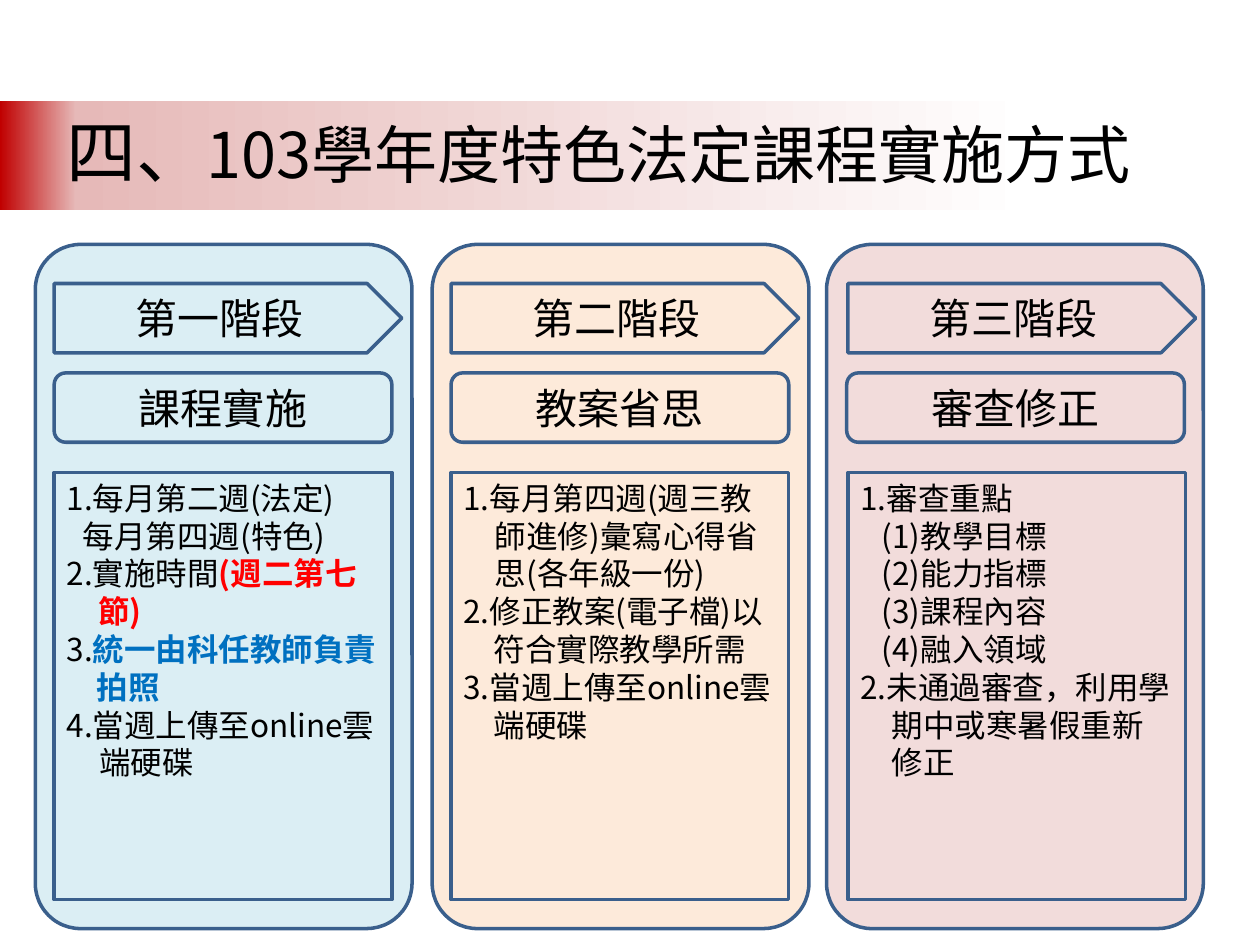
from copy import deepcopy

from pptx import Presentation
from pptx.dml.color import RGBColor
from pptx.enum.shapes import MSO_SHAPE as SHAPE
from pptx.enum.text import MSO_ANCHOR as ANCHOR, MSO_AUTO_SIZE as AUTO, PP_ALIGN as ALIGN
from pptx.oxml.ns import qn
from pptx.util import Inches, Pt

SANS = "Noto Sans CJK SC"
BLACK, RED, BLUE, OUTLINE = "000000", "FF0000", "0070C0", "3A5F8C"

STAGES = [
    (0.28, 0.43, 0.43, "DBEEF4", "第一階段", "課程實施", [
        (0, 0, [("1.每月第二週(法定)", BLACK)]),
        (0.13, 0, [("每月第四週(特色)", BLACK)]),
        (0.25, -0.25, [("2.實施時間", BLACK), ("(週二第七節)", RED)]),
        (0.24, -0.24, [("3.", BLACK), ("統一由科任教師負責拍照", BLUE)]),
        (0.26, -0.26, [("4.當週上傳至online雲端硬碟", BLACK)]),
    ]),
    (3.43, 3.58, 3.58, "FDEADA", "第二階段", "教案省思", [
        (0.25, -0.25, [("1.每月第四週(週三教師進修)彙寫心得省思(各年級一份)", BLACK)]),
        (0.24, -0.24, [("2.修正教案(電子檔)以符合實際教學所需", BLACK)]),
        (0.24, -0.24, [("3.當週上傳至online雲端硬碟", BLACK)]),
    ]),
    (6.56, 6.73, 6.72, "F2DCDB", "第三階段", "審查修正", [
        (0, 0, [("1.審查重點", BLACK)]),
        (0.17, 0, [("(1)教學目標", BLACK)]),
        (0.17, 0, [("(2)能力指標", BLACK)]),
        (0.17, 0, [("(3)課程內容", BLACK)]),
        (0.17, 0, [("(4)融入領域", BLACK)]),
        (0.25, -0.25, [("2.未通過審查，利用學期中或寒暑假重新修正", BLACK)]),
    ]),
]


def rgb(color):
    return RGBColor.from_string(color)


def add_run(p, text, size, font=SANS, color=BLACK, bold=False):
    r = p.add_run()
    r.text = text
    r.font.size = Pt(size)
    r.font.name = font
    r.font.bold = bold
    r.font.color.rgb = rgb(color)
    if font == SANS:
        latin = r.font._element.find(qn("a:latin"))
        ea = latin.makeelement(qn("a:ea"), {"typeface": font})
        latin.addnext(ea)


def add_box(shapes, kind, x, y, w, h, fill=None):
    sp = shapes.add_shape(kind, Inches(x), Inches(y), Inches(w), Inches(h))
    sp.shadow.inherit = False
    if fill:
        sp.fill.solid()
        sp.fill.fore_color.rgb = rgb(fill)
    else:
        sp.fill.background()
    sp.line.color.rgb = rgb(OUTLINE)
    sp.line.width = Pt(2)
    return sp


def add_label(shapes, kind, x, y, w, text, font):
    sp = add_box(shapes, kind, x, y, w, 0.55)
    tf = sp.text_frame
    tf.vertical_anchor = ANCHOR.MIDDLE
    p = tf.paragraphs[0]
    p.alignment = ALIGN.CENTER
    add_run(p, text, 24, font)


def add_steps(shapes, x, steps):
    sp = add_box(shapes, SHAPE.RECTANGLE, x, 3.75, 2.68, 3.39)
    tf = sp.text_frame
    tf.word_wrap = True
    tf.vertical_anchor = ANCHOR.TOP
    for i, (margin, indent, runs) in enumerate(steps):
        p = tf.add_paragraph() if i else tf.paragraphs[0]
        p.alignment = ALIGN.LEFT
        p.line_spacing = Pt(21.6)
        pPr = p._p.get_or_add_pPr()
        pPr.set("marL", str(Inches(margin)))
        pPr.set("indent", str(Inches(indent)))
        for text, color in runs:
            add_run(p, text, 18, color=color, bold=color != BLACK)


def add_stage(s, card_x, x, topic_x, fill, stage, topic, steps):
    shapes = s.shapes.add_group_shape().shapes
    card = add_box(shapes, SHAPE.ROUNDED_RECTANGLE, card_x, 1.94, 2.99, 5.43, fill)
    card.adjustments[0] = 0.12
    add_label(shapes, SHAPE.PENTAGON, x, 2.25, 2.76, stage, SANS)
    add_label(shapes, SHAPE.ROUNDED_RECTANGLE, topic_x, 2.96, 2.68, topic, "Calibri")
    add_steps(shapes, x, steps)


def add_band(s):
    band = add_box(s.shapes, SHAPE.RECTANGLE, 0, 0.8, 8.62, 0.87)
    band.line.fill.background()
    band.fill.gradient()
    band.fill.gradient_angle = 0
    last = band.element.findall(".//" + qn("a:gs"))[-1]
    last.addnext(deepcopy(last))
    colors = [(0, "C00000"), (0.07, "E6B9B8"), (0.95, "FFFFFF")]
    for stop, (position, color) in zip(band.fill.gradient_stops, colors):
        stop.position = position
        stop.color.rgb = rgb(color)
    s.shapes.title.element.addprevious(band.element)


def set_title(s):
    title = s.shapes.title
    title.left, title.top = Inches(0.43), Inches(0.81)
    title.width, title.height = Inches(9.57), Inches(0.77)
    tf = title.text_frame
    tf.auto_size = AUTO.NONE
    tf.word_wrap = True
    tf.vertical_anchor = ANCHOR.TOP
    p = tf.paragraphs[0]
    p.alignment = ALIGN.LEFT
    add_run(p, "四、", 40)
    add_run(p, "103學年度特色法定課程實施方式", 36)


def main():
    prs = Presentation()
    prs.slide_width, prs.slide_height = Inches(10), Inches(7.5)
    s = prs.slides.add_slide(prs.slide_layouts[5])
    add_band(s)
    set_title(s)
    for stage in STAGES:
        add_stage(s, *stage)
    prs.save("out.pptx")


if __name__ == "__main__":
    main()
